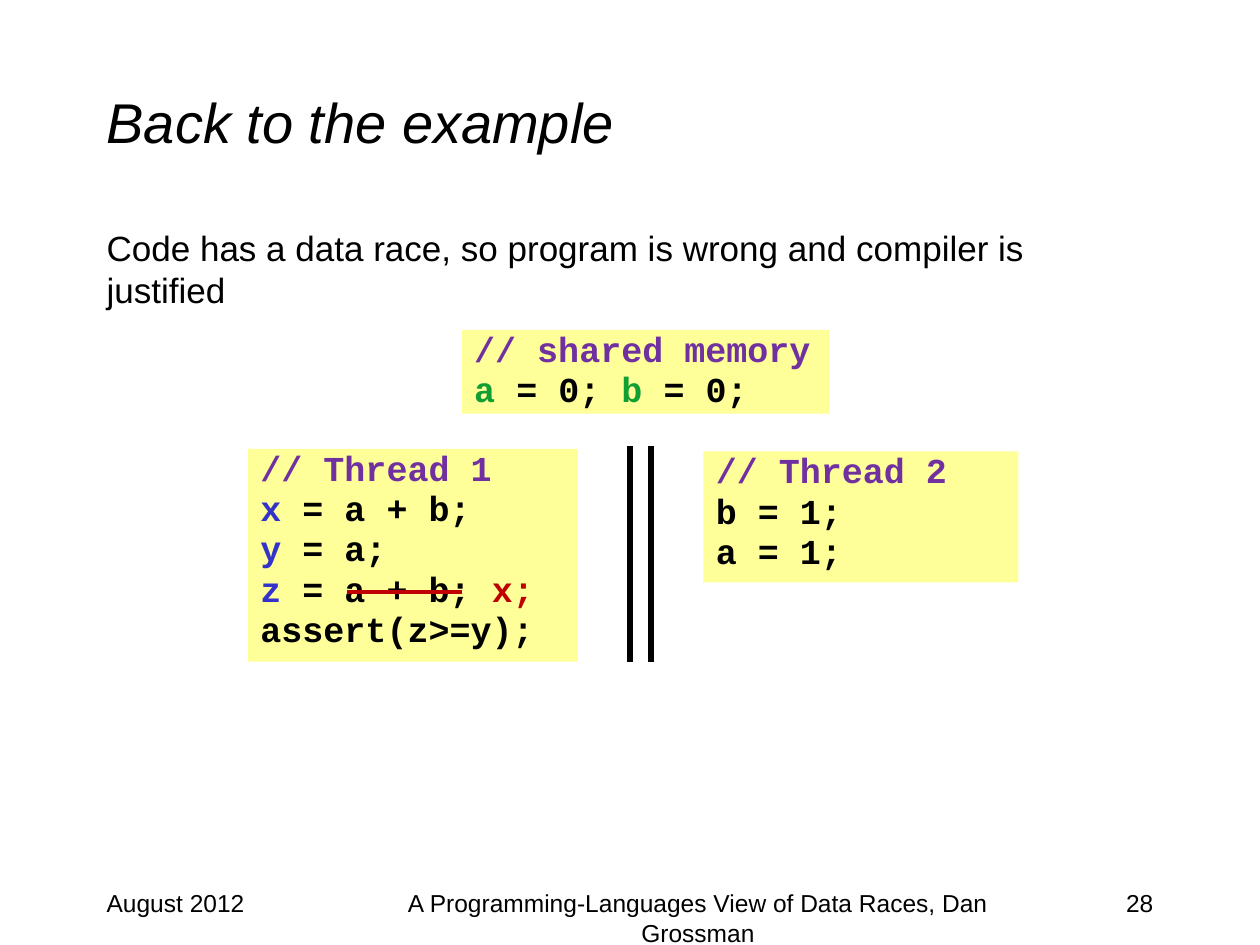
from lxml import etree
from pptx import Presentation
from pptx.dml.color import RGBColor
from pptx.enum.shapes import MSO_CONNECTOR as LINE, MSO_SHAPE as SHAPE
from pptx.enum.text import MSO_ANCHOR as ANCHOR, PP_ALIGN as ALIGN
from pptx.oxml.ns import qn
from pptx.util import Cm, Pt

COLORS = {
    "black": "000000",
    "comment": "7030A0",
    "shared": "119F33",
    "local": "3333CC",
    "change": "C00000",
    "code_fill": "FFFF99",
}
MARGIN, CONTENT_WIDTH = 1.9, 21.6
HANG = Cm(0.95)


def rgb(name):
    return RGBColor.from_string(COLORS[name])


def add_text(page, box, text, size, align=ALIGN.LEFT, anchor=ANCHOR.TOP,
             italic=False, before=0):
    """Place one paragraph of Arial in a wrapping text box."""
    frame = page.shapes.add_textbox(*map(Cm, box)).text_frame
    frame.word_wrap = True
    frame.vertical_anchor = anchor
    para = frame.paragraphs[0]
    para.text = text
    para.alignment = align
    para.space_before = Pt(before)
    para.font.name = "Arial"
    para.font.size = Pt(size)
    para.font.italic = italic
    para.font.color.rgb = rgb("black")


def add_line(page, start, end, color, width):
    line = page.shapes.add_connector(LINE.STRAIGHT, *map(Cm, start + end))
    line.line.color.rgb = rgb(color)
    line.line.width = Pt(width)
    etree.SubElement(line._element.spPr, qn("a:effectLst"))


def add_code(page, box, lines):
    """Draw a code panel; each line is a list of (text, color) spans."""
    panel = page.shapes.add_shape(SHAPE.RECTANGLE, *map(Cm, box))
    panel.shadow.inherit = False
    panel.fill.solid()
    panel.fill.fore_color.rgb = rgb("code_fill")
    panel.line.fill.background()
    frame = panel.text_frame
    frame.word_wrap = True
    frame.vertical_anchor = ANCHOR.TOP
    for index, spans in enumerate(lines):
        para = frame.add_paragraph() if index else frame.paragraphs[0]
        para.alignment = ALIGN.LEFT
        para.line_spacing = Pt(19)
        para.space_before = Pt(4)
        para.font.name = "Courier New"
        para.font.size = Pt(20)
        para.font.bold = True
        # Hanging indent
        props = para._p.get_or_add_pPr()
        props.set("marL", str(HANG))
        props.set("indent", str(-HANG))
        for text, color in spans:
            span = para.add_run()
            span.text = text
            span.font.color.rgb = rgb(color)


def add_threads(page, box):
    """Two threads side by side, parted by a double bar."""
    left, top, width, height = box
    add_code(page, (left, top + 0.05, 6.65, height - 0.05), [
        [("// Thread 1", "comment")],
        [("x ", "local"), ("= a + b;", "black")],
        [("y ", "local"), ("= a;", "black")],
        [("z ", "local"), ("= a + b; ", "black"), ("x;", "change")],
        [("assert(z>=y);", "black")],
    ])
    add_code(page, (left + width - 6.35, top + 0.1, 6.35, 2.64), [
        [("// Thread 2", "comment")],
        [("b = 1;", "black")],
        [("a = 1;", "black")],
    ])
    for bar in (left + 7.7, left + 8.12):
        add_line(page, (bar, top), (bar, top + height), "black", 3.75)
    # Strike out the replaced expression
    strike = top + 2.94
    add_line(page, (left + 2, strike), (left + 4.32, strike), "change", 2.5)


def add_footer(page, box):
    left, top, width, height = box
    side = 5.3
    add_text(page, (left, top, side, height), "August 2012", 14)
    add_text(page, (left + width - side, top, side, height), "28", 14,
             ALIGN.RIGHT)
    add_text(page, (left + 5.08, top, 14.18, height),
             "A Programming-Languages View of Data Races, Dan Grossman", 14,
             ALIGN.CENTER)


def main():
    deck = Presentation()
    deck.slide_width, deck.slide_height = Cm(25.4), Cm(19.05)
    page = deck.slides.add_slide(deck.slide_layouts[6])

    # Title and statement
    add_text(page, (MARGIN, 0.85, CONTENT_WIDTH, 3.18),
             "Back to the example", 32, anchor=ANCHOR.MIDDLE, italic=True)
    add_text(page, (MARGIN, 4.45, CONTENT_WIDTH, 2.12),
             "Code has a data race, so program is wrong and compiler is "
             "justified", 20, before=4)

    # Example code
    add_code(page, (9.31, 6.65, 7.41, 1.69), [
        [("// shared memory", "comment")],
        [("a ", "shared"), ("= 0; ", "black"),
         ("b ", "shared"), ("= 0;", "black")],
    ])
    add_threads(page, (5, 9, 15.53, 4.34))

    add_footer(page, (MARGIN, 17.78, CONTENT_WIDTH, 1.27))
    deck.save("out.pptx")


if __name__ == "__main__":
    main()
